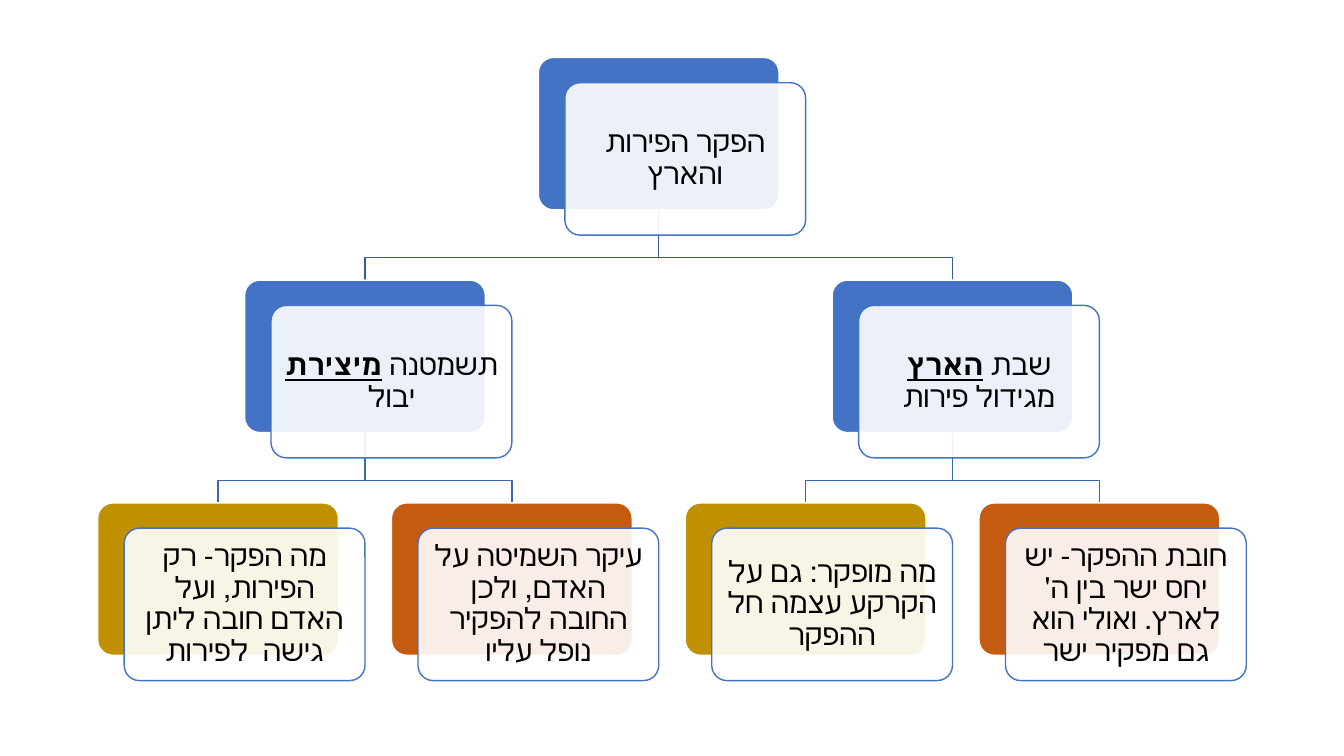
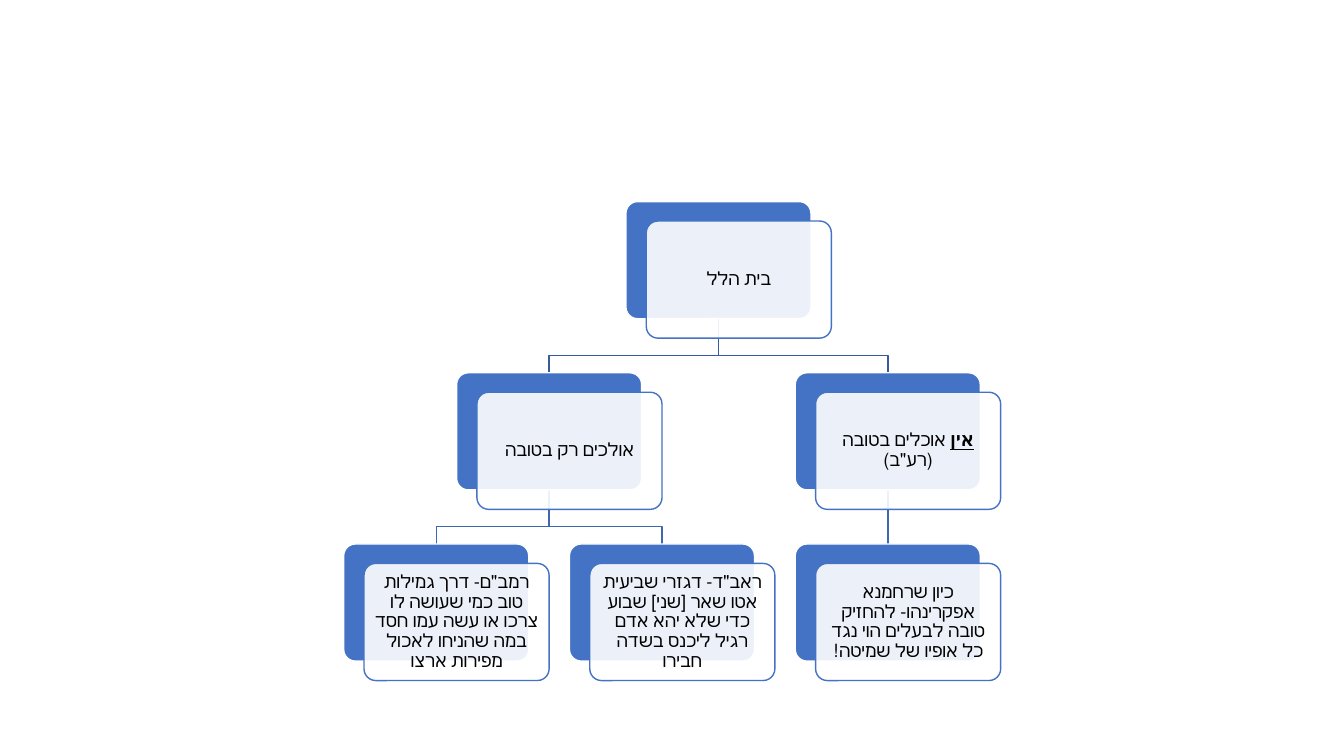
from dataclasses import dataclass, field

from lxml.etree import SubElement
from pptx import Presentation
from pptx.dml.color import RGBColor
from pptx.enum.shapes import MSO_CONNECTOR, MSO_SHAPE
from pptx.enum.text import MSO_ANCHOR, PP_ALIGN
from pptx.oxml.ns import qn
from pptx.util import Pt


# Theme
class Theme:
    font = "Calibri"
    text = RGBColor(0x00, 0x00, 0x00)
    white = RGBColor(0xFF, 0xFF, 0xFF)
    blue = RGBColor(0x44, 0x72, 0xC4)
    orange = RGBColor(0xC5, 0x5A, 0x11)
    gold = RGBColor(0xBF, 0x90, 0x00)
    links = (RGBColor(0x36, 0x5B, 0x9D), RGBColor(0x3E, 0x67, 0xB2))  # by level
    line_width = 1
    card_opacity = 90
    large_text = 21
    small_text = 13


# Proportions of a tree, relative to the width of a box
HEIGHT = 0.633
COLUMN_STEP = 1.22
LEVEL_STEP = 0.925
CARD_SHIFT_X = 0.11
CARD_SHIFT_Y = 0.105
BEND_ABOVE_CHILD = 0.093
CORNER = 0.1
INSET_PER_TEXT_SIZE = 0.3


@dataclass
class Node:
    runs: list  # (text, emphasised)
    children: list = field(default_factory=list)  # from left to right
    color: RGBColor = Theme.blue
    left: float = 0
    top: float = 0


# Content
fruit_tree = Node([("הפקר הפירות והארץ", False)], [
    Node([("תשמטנה ", False), ("מיצירת", True), (" יבול", False)], [
        Node([("מה הפקר- רק הפירות, ועל האדם חובה ליתן גישה  לפירות", False)],
             color=Theme.gold),
        Node([("עיקר השמיטה על האדם, ולכן החובה להפקיר נופל עליו", False)],
             color=Theme.orange),
    ]),
    Node([("שבת ", False), ("הארץ ", True), ("מגידול פירות", False)], [
        Node([("מה מופקר: גם על הקרקע עצמה חל ההפקר", False)],
             color=Theme.gold),
        Node([("חובת ההפקר- יש יחס ישר בין ה' לארץ. ואולי הוא גם מפקיר ישר", False)],
             color=Theme.orange),
    ]),
])

hillel_tree = Node([("בית הלל", False)], [
    Node([("אולכים רק בטובה", False)], [
        Node([("רמב\"ם- דרך גמילות טוב כמי שעושה לו צרכו או עשה עמו חסד "
               "במה שהניחו לאכול מפירות ארצו", False)]),
        Node([("ראב\"ד- דגזרי שביעית אטו שאר [שני] שבוע כדי שלא יהא אדם "
               "רגיל ליכנס בשדה חבירו", False)]),
    ]),
    Node([("אין", True), (" אוכלים בטובה (רע\"ב)", False)], [
        Node([("כיון שרחמנא אפקרינהו- להחזיק טובה לבעלים הוי נגד "
               "כל אופיו של שמיטה!", False)]),
    ]),
])

SLIDES = [
    {"root": fruit_tree, "left": 69.8, "top": 41, "width": 172, "size": Theme.large_text},
    {"root": hillel_tree, "left": 245.5, "top": 144, "width": 132.2, "size": Theme.small_text},
]


# Layout: leaves fill columns, each parent is centred over its children
def place(node, left, top, width):
    """Place a subtree and return the left edge of the next free column."""
    node.left, node.top = left, top
    if not node.children:
        return left + COLUMN_STEP * width
    for child in node.children:
        left = place(child, left, top + LEVEL_STEP * width, width)
    node.left = (node.children[0].left + node.children[-1].left) / 2
    return left


# Drawing
def draw_link(slide, parent, child, width, color):
    start_x, end_x = (Pt(node.left + width / 2) for node in (parent, child))
    start_y, end_y = Pt(parent.top + HEIGHT * width), Pt(child.top)
    bend_y = Pt(child.top - BEND_ABOVE_CHILD * width)
    if start_x == end_x:
        link = slide.shapes.add_connector(
            MSO_CONNECTOR.STRAIGHT, start_x, start_y, end_x, end_y)
        SubElement(link._element.spPr, qn("a:effectLst"))
    else:
        builder = slide.shapes.build_freeform(start_x, start_y)
        builder.add_line_segments(
            [(start_x, bend_y), (end_x, bend_y), (end_x, end_y)], close=False)
        link = builder.convert_to_shape()
        link.fill.background()
        link.shadow.inherit = False
    link.line.color.rgb = color
    link.line.width = Pt(Theme.line_width)


def draw_links(slide, node, width, level=0):
    for child in node.children:
        draw_links(slide, child, width, level + 1)
        draw_link(slide, node, child, width, Theme.links[level])


def draw_box(slide, left, top, width, fill, line):
    box = slide.shapes.add_shape(
        MSO_SHAPE.ROUNDED_RECTANGLE, Pt(left), Pt(top), Pt(width), Pt(HEIGHT * width))
    box.adjustments[0] = CORNER
    box.shadow.inherit = False
    box.fill.solid()
    box.fill.fore_color.rgb = fill
    box.line.color.rgb = line
    box.line.width = Pt(Theme.line_width)
    return box


def write_text(box, runs, size):
    frame = box.text_frame
    frame.word_wrap = True
    frame.vertical_anchor = MSO_ANCHOR.MIDDLE
    inset = Pt(INSET_PER_TEXT_SIZE * size)
    frame.margin_left = frame.margin_right = inset
    frame.margin_top = frame.margin_bottom = inset
    paragraph = frame.paragraphs[0]
    paragraph.alignment = PP_ALIGN.CENTER
    paragraph.line_spacing = 0.9
    paragraph._p.get_or_add_pPr().set("rtl", "1")
    for text, emphasised in runs:
        run = paragraph.add_run()
        run.text = text
        font = run.font
        font.name = Theme.font
        font.size = Pt(size)
        font.color.rgb = Theme.text
        font.bold = font.underline = emphasised
        run._r.get_or_add_rPr().set("lang", "he-IL")


def draw_nodes(slide, node, width, size):
    draw_box(slide, node.left, node.top, width, node.color, Theme.white)
    card = draw_box(slide, node.left + CARD_SHIFT_X * width,
                    node.top + CARD_SHIFT_Y * width, width, Theme.white, Theme.blue)
    fill_color = card._element.spPr.find(qn("a:solidFill"))[0]
    SubElement(fill_color, qn("a:alpha"), val=str(Theme.card_opacity * 1000))
    write_text(card, node.runs, size)
    for child in node.children:
        draw_nodes(slide, child, width, size)


def main():
    presentation = Presentation()
    presentation.slide_width, presentation.slide_height = Pt(960), Pt(540)
    for content in SLIDES:
        slide = presentation.slides.add_slide(presentation.slide_layouts[6])
        root, width = content["root"], content["width"]
        place(root, content["left"], content["top"], width)
        draw_links(slide, root, width)
        draw_nodes(slide, root, width, content["size"])
    presentation.save("out.pptx")


if __name__ == "__main__":
    main()
